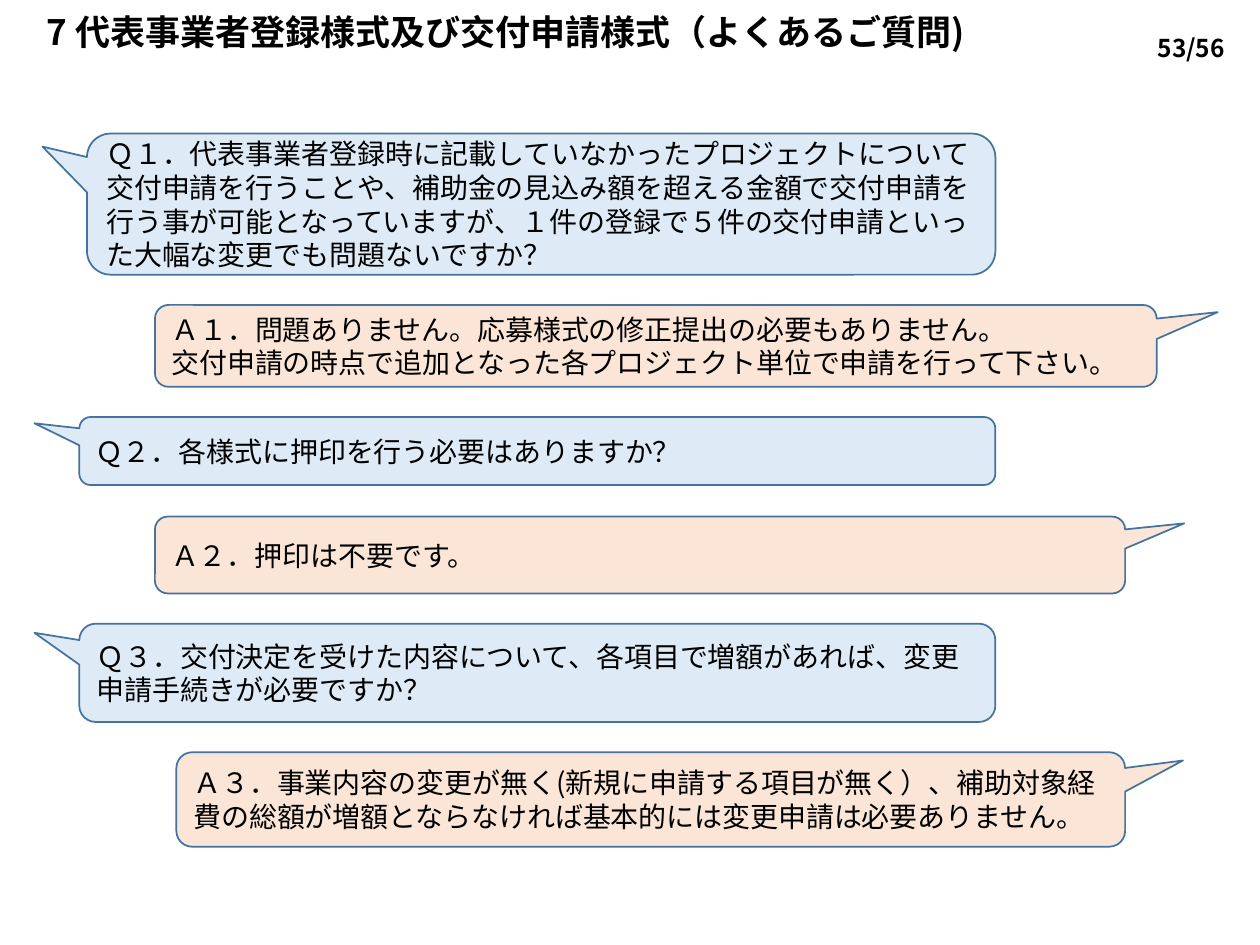
from dataclasses import dataclass

from lxml import etree
from pptx import Presentation
from pptx import util as u
from pptx.dml.color import RGBColor
from pptx.enum import shapes, text
from pptx.oxml.ns import qn

FONT = "Noto Sans CJK JP"
COLORS = {"ask": "DEEBF7", "reply": "FBE5D6", "edge": "43739E", "ink": "000000"}
TAILS = {"ask": (-0.549, -0.407, 0.167), "reply": (0.561, -0.412, 0.167)}


@dataclass
class Bubble:
    """A question or answer balloon, in inches."""

    role: str
    left: float
    top: float
    width: float
    height: float
    words: str


BUBBLES = [
    Bubble("ask", 0.69, 1.06, 7.21, 1.12,
           "Ｑ１．代表事業者登録時に記載していなかったプロジェクトについて"
           "交付申請を行うことや、補助金の見込み額を超える金額で交付申請を"
           "行う事が可能となっていますが、１件の登録で５件の交付申請といった"
           "大幅な変更でも問題ないですか？"),
    Bubble("reply", 1.23, 2.42, 7.95, 0.65,
           "Ａ１．問題ありません。応募様式の修正提出の必要もありません。\n"
           "交付申請の時点で追加となった各プロジェクト単位で申請を行って下さい。"),
    Bubble("ask", 0.63, 3.31, 7.27, 0.54,
           "Ｑ２．各様式に押印を行う必要はありますか？"),
    Bubble("reply", 1.23, 4.1, 7.7, 0.61, "Ａ２．押印は不要です。"),
    Bubble("ask", 0.63, 4.95, 7.27, 0.78,
           "Ｑ３．交付決定を受けた内容について、各項目で増額があれば、"
           "変更申請手続きが必要ですか？"),
    Bubble("reply", 1.4, 5.97, 7.53, 0.75,
           "Ａ３．事業内容の変更が無く(新規に申請する項目が無く）、補助対象"
           "経費の総額が増額とならなければ基本的には変更申請は必要ありません。"),
]


def color(name: str) -> RGBColor:
    """Look up a colour by its role."""
    return RGBColor.from_string(COLORS[name])


def write(shape, words: str, size: int, bold: bool = False,
          align=text.PP_ALIGN.LEFT, space=None) -> None:
    """Fill a shape with text and format its runs."""
    frame = shape.text_frame
    frame.word_wrap = True
    frame.vertical_anchor = text.MSO_ANCHOR.MIDDLE
    frame.text = words
    for para in frame.paragraphs:
        para.alignment = align
        para.line_spacing = space
        for run in para.runs:
            font = run.font
            font.name, font.size, font.bold = FONT, u.Pt(size), bold
            font.color.rgb = color("ink")
            east = etree.SubElement(run._r.get_or_add_rPr(), qn("a:ea"))
            east.set("typeface", FONT)


def label(slide, box: tuple, words: str, size: int, **style) -> None:
    """Add a bold text box."""
    shape = slide.shapes.add_textbox(*map(u.Inches, box))
    write(shape, words, size, bold=True, **style)


def draw(slide, item: Bubble) -> None:
    """Add one balloon with its tail and text."""
    box = (item.left, item.top, item.width, item.height)
    shape = slide.shapes.add_shape(
        shapes.MSO_SHAPE.ROUNDED_RECTANGULAR_CALLOUT, *map(u.Inches, box))
    for spot, value in enumerate(TAILS[item.role]):
        shape.adjustments[spot] = value
    shape.shadow.inherit = False
    shape.fill.solid()
    shape.fill.fore_color.rgb = color(item.role)
    shape.line.color.rgb = color("edge")
    shape.line.width = u.Pt(1)
    write(shape, item.words, 16)


def main() -> None:
    """Build and save the slide."""
    deck = Presentation()
    deck.slide_width, deck.slide_height = u.Inches(10), u.Inches(7.5)
    slide = deck.slides.add_slide(deck.slide_layouts[6])
    label(slide, (0.27, 0, 8.12, 0.54),
          "7 代表事業者登録様式及び交付申請様式（よくあるご質問)", 20, space=0.9)
    label(slide, (8.91, 0, 1.09, 0.43), "53/56", 14,
          align=text.PP_ALIGN.CENTER, space=u.Pt(40))
    for item in BUBBLES:
        draw(slide, item)
    deck.save("out.pptx")


if __name__ == "__main__":
    main()
